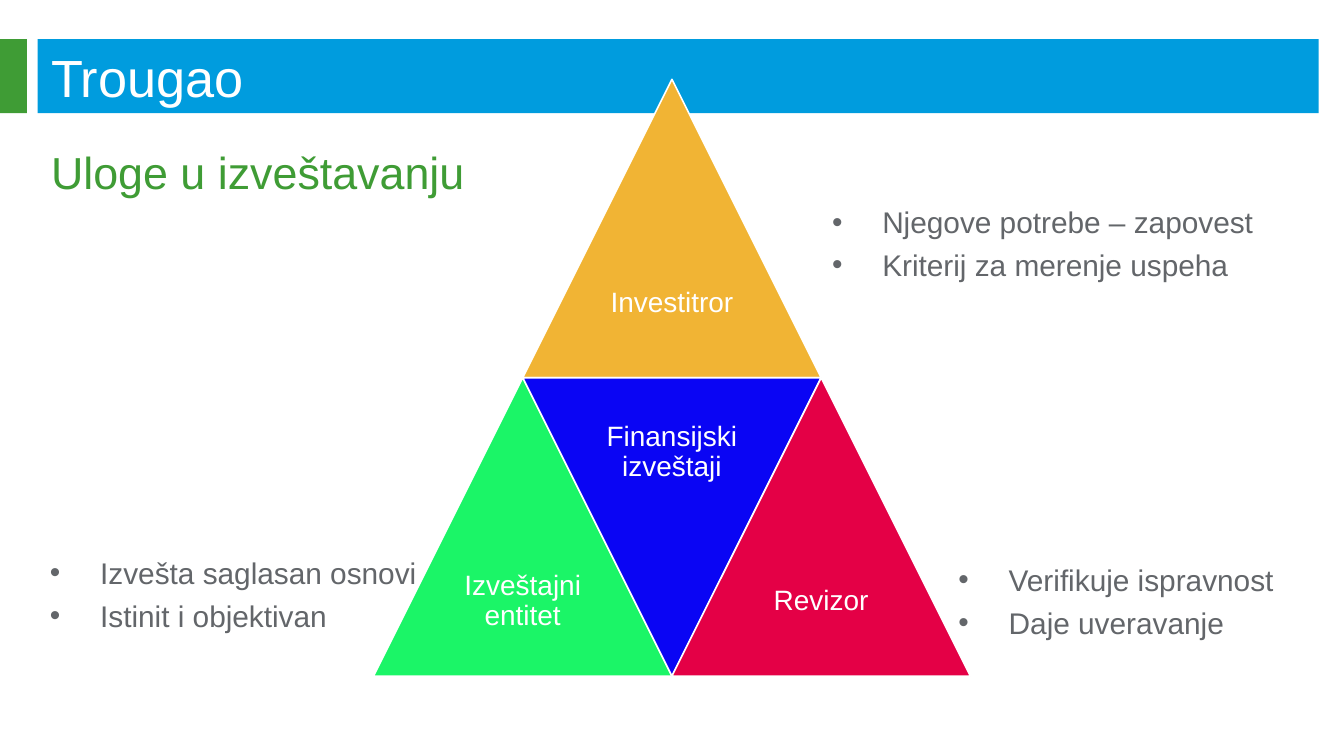
"""Build the slide about the reporting triangle and its roles."""
from lxml import etree
from pptx import Presentation
from pptx.dml.color import RGBColor
from pptx.enum.shapes import MSO_SHAPE
from pptx.enum.text import MSO_ANCHOR, MSO_AUTO_SIZE, PP_ALIGN
from pptx.oxml.ns import qn
from pptx.util import Cm, Pt

RECTANGLE = MSO_SHAPE.RECTANGLE
TRIANGLE = MSO_SHAPE.ISOSCELES_TRIANGLE
TOP, MIDDLE = MSO_ANCHOR.TOP, MSO_ANCHOR.MIDDLE
LEFT, CENTER = PP_ALIGN.LEFT, PP_ALIGN.CENTER
FIXED = MSO_AUTO_SIZE.NONE
COMPARISON_LAYOUT = 4
FONT = "Arial"
COLOURS = {
    "white": "FFFFFF", "blue": "009CDE", "green": "3F9C35", "grey": "63666A",
    "investor": "F1B434", "entity": "1BF567", "reports": "0A05F4", "auditor": "E40046",
}
SIDE = 5.64
HALF = SIDE / 2
MIDDLE_X, APEX_Y = 12.7, 1.5
BASE_Y = APEX_Y + SIDE

TRIANGLES = [
    ("Investitror", "investor", MIDDLE_X, APEX_Y, False),
    ("Izveštajni entitet", "entity", MIDDLE_X - HALF, BASE_Y, False),
    ("Finansijski izveštaji", "reports", MIDDLE_X, BASE_Y, True),
    ("Revizor", "auditor", MIDDLE_X + HALF, BASE_Y, False),
]
LISTS = [
    (2, (15.47, 3.73, 9.42, 2.72), ["Njegove potrebe – zapovest", "Kriterij za merenje uspeha"]),
    (3, (17.86, 10.49, 7.37, 2.72), ["Verifikuje ispravnost", "Daje uveravanje"]),
    (4, (0.69, 10.36, 9.42, 2.72), ["Izvešta saglasan osnovi", "Istinit i objektivan"]),
]


def colour(name):
    return RGBColor.from_string(COLOURS[name])


def add_bullet(para):
    properties = para._p.get_or_add_pPr()
    properties.set("marL", str(Cm(0.95)))
    properties.set("indent", str(-Cm(0.95)))
    etree.SubElement(properties, qn("a:buFont"), typeface=FONT)
    etree.SubElement(properties, qn("a:buChar"), char="•")


def write(box, lines, size, ink, align=LEFT, anchor=TOP, bullets=False, spacing=1.0, inset=None):
    frame = box.text_frame
    frame.word_wrap = True
    frame.auto_size = FIXED
    frame.vertical_anchor = anchor
    if inset is not None:
        frame.margin_left = frame.margin_right = Cm(inset)
        frame.margin_top = frame.margin_bottom = Cm(inset)
    for index, line in enumerate(lines):
        para = frame.paragraphs[0] if index == 0 else frame.add_paragraph()
        if bullets:
            add_bullet(para)
        para.alignment = align
        para.line_spacing = spacing
        para.space_before = Pt(3.7 if index else 0)
        span = para.add_run()
        span.text = line
        span.font.name = FONT
        span.font.size = Pt(size)
        span.font.bold = False
        span.font.color.rgb = colour(ink)


def place(box, left, top, width, height):
    box.left, box.top, box.width, box.height = Cm(left), Cm(top), Cm(width), Cm(height)


def add_filled(page, kind, left, top, width, height, fill):
    shape = page.shapes.add_shape(kind, Cm(left), Cm(top), Cm(width), Cm(height))
    shape.shadow.inherit = False
    shape.fill.solid()
    shape.fill.fore_color.rgb = colour(fill)
    shape.line.fill.background()
    return shape


def add_triangle(page, label, fill, center, top, inverted):
    shape = add_filled(page, TRIANGLE, center - HALF, top, SIDE, SIDE, fill)
    shape.line.color.rgb = colour("white")
    shape.line.width = Pt(0.85)
    shape.rotation = 180 if inverted else 0
    label_top = top if inverted else top + HALF
    box = page.shapes.add_textbox(Cm(center - HALF / 2), Cm(label_top), Cm(HALF), Cm(HALF))
    write(box, [label], 15, "white", align=CENTER, anchor=MIDDLE, spacing=0.9, inset=0.15)


def add_title(page):
    title = page.shapes.title
    place(title, 0.71, 0.74, 24.21, 1.4)
    title.fill.solid()
    title.fill.fore_color.rgb = colour("blue")
    write(title, ["Trougao"], 28, "white", anchor=MIDDLE)
    add_filled(page, RECTANGLE, 0, 0.74, 0.51, 1.4, "green")


def main():
    deck = Presentation()
    deck.slide_width, deck.slide_height = Cm(25.4), Cm(14.29)
    page = deck.slides.add_slide(deck.slide_layouts[COMPARISON_LAYOUT])
    add_title(page)
    bodies = {box.placeholder_format.idx: box for box in page.placeholders}
    place(bodies[1], 0.71, 2.6, 24.21, 1.35)
    write(bodies[1], ["Uloge u izveštavanju"], 24, "green")
    for index, area, lines in LISTS:
        place(bodies[index], *area)
        write(bodies[index], lines, 16, "grey", bullets=True)
    for triangle in TRIANGLES:
        add_triangle(page, *triangle)
    deck.save("out.pptx")


if __name__ == "__main__":
    main()
